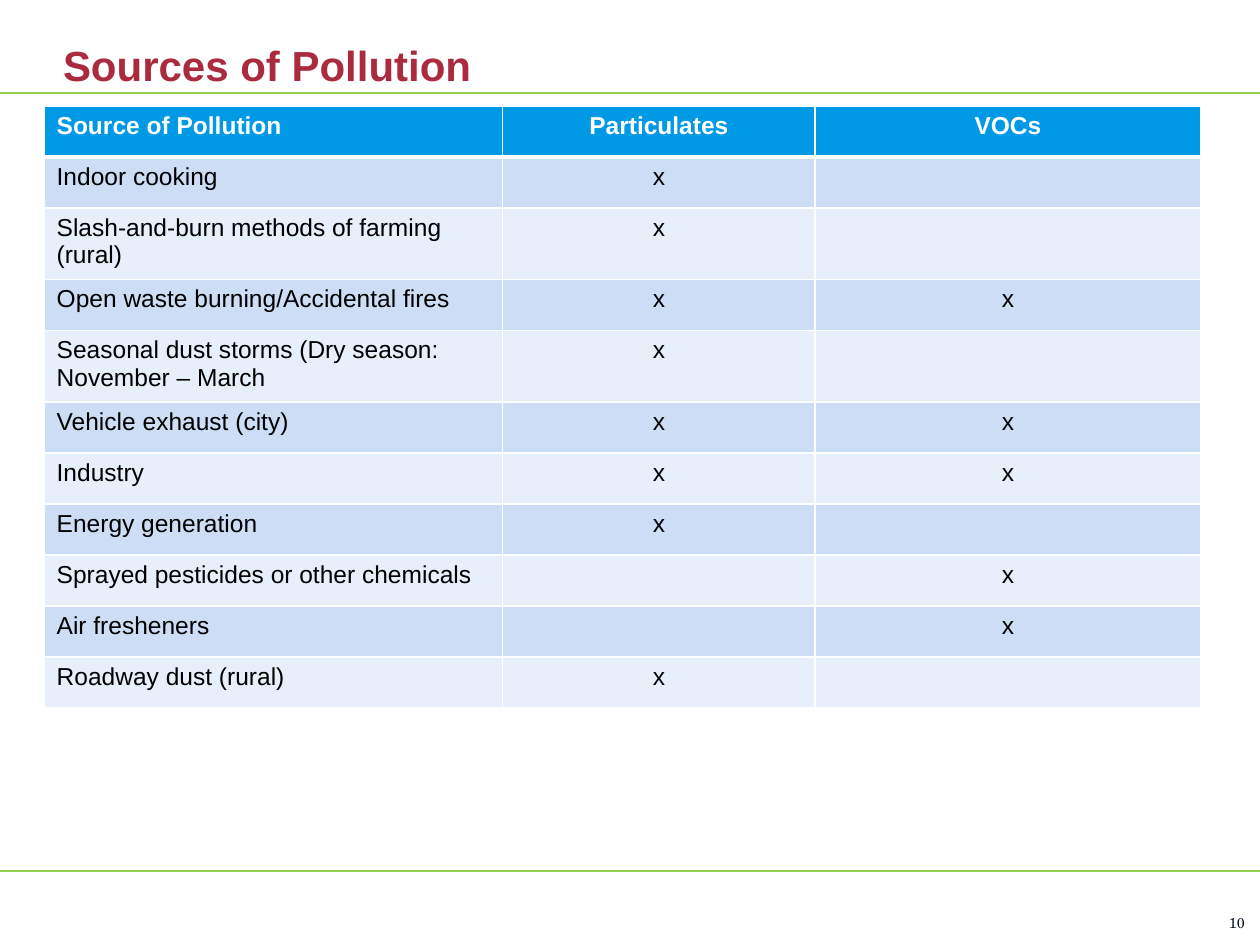
from lxml import etree
from pptx import Presentation
from pptx.dml.color import RGBColor
from pptx.enum.shapes import MSO_CONNECTOR
from pptx.enum.text import MSO_ANCHOR, PP_ALIGN
from pptx.oxml.ns import qn
from pptx.util import Inches, Pt

LINE = MSO_CONNECTOR.STRAIGHT
BOTTOM = MSO_ANCHOR.BOTTOM
LEFT, CENTER, RIGHT = PP_ALIGN.LEFT, PP_ALIGN.CENTER, PP_ALIGN.RIGHT

COLORS = {
    "title": "AA2B3E",
    "rule": "92D050",
    "head": "0099E6",
    "odd": "CCDEF5",
    "even": "E7EFFA",
    "white": "FFFFFF",
    "black": "000000",
    "number": "061323",
}
HEADS = ["Source of Pollution", "Particulates", "VOCs"]
ROWS = [
    ("Indoor cooking", "x", ""),
    ("Slash-and-burn methods of farming (rural)", "x", ""),
    ("Open waste burning/Accidental fires", "x", "x"),
    ("Seasonal dust storms (Dry season: November – March", "x", ""),
    ("Vehicle exhaust (city)", "x", "x"),
    ("Industry", "x", "x"),
    ("Energy generation", "x", ""),
    ("Sprayed pesticides or other chemicals", "", "x"),
    ("Air fresheners", "", "x"),
    ("Roadway dust (rural)", "x", ""),
]
WIDTHS = [3.64, 2.48, 3.06]
ROW_HIGH = 0.405


def color(name):
    return RGBColor.from_string(COLORS[name])


def add_run(para, text, size, tint, bold=False, face="Arial"):
    run = para.add_run()
    run.text = text
    font = run.font
    font.name, font.size, font.bold = face, Pt(size), bold
    font.color.rgb = color(tint)


def add_text(slide, box, text, size, tint, align=LEFT, wrap=True, **style):
    shape = slide.shapes.add_textbox(*map(Inches, box))
    frame = shape.text_frame
    frame.word_wrap = wrap
    frame.vertical_anchor = BOTTOM
    frame.margin_left = frame.margin_right = 0
    frame.margin_top = frame.margin_bottom = 0
    para = frame.paragraphs[0]
    para.alignment = align
    add_run(para, text, size, tint, **style)


def add_rule(slide, top):
    rule = slide.shapes.add_connector(LINE, 0, Inches(top), Inches(10), Inches(top))
    rule.line.color.rgb = color("rule")
    rule.line.width = Pt(1)
    etree.SubElement(rule._element.spPr, qn("a:effectLst"))


def add_edges(cell, top, bottom):
    props = cell._tc.get_or_add_tcPr()
    for side, width in (("L", 1), ("R", 1), ("T", top), ("B", bottom)):
        edge = etree.SubElement(props, qn("a:ln" + side), w=str(Pt(width)))
        fill = etree.SubElement(edge, qn("a:solidFill"))
        etree.SubElement(fill, qn("a:srgbClr"), val=COLORS["white"])


def fill_cell(cell, row, col, text):
    head = row == 0
    add_edges(cell, 3 if row == 1 else 1, 3 if head else 1)
    cell.fill.solid()
    cell.fill.fore_color.rgb = color("head" if head else "odd" if row % 2 else "even")
    para = cell.text_frame.paragraphs[0]
    para.alignment = CENTER if col else LEFT
    if text:
        add_run(para, text, 14, "white" if head else "black", bold=head)
    else:
        para.font.size = Pt(14)


def add_grid(slide):
    data = [HEADS, *ROWS]
    box = (0.35, 0.84, sum(WIDTHS), ROW_HIGH * len(data))
    table = slide.shapes.add_table(len(data), len(HEADS), *map(Inches, box)).table
    for col, width in enumerate(WIDTHS):
        table.columns[col].width = Inches(width)
    for row, texts in enumerate(data):
        table.rows[row].height = Inches(ROW_HIGH)
        for col, text in enumerate(texts):
            fill_cell(table.cell(row, col), row, col, text)


def main():
    deck = Presentation()
    deck.slide_width, deck.slide_height = Inches(10), Inches(7.5)
    slide = deck.slides.add_slide(deck.slide_layouts[6])
    add_text(slide, (9.75, 7.25, 0.13, 0.14), "10", 8.2, "number",
             align=RIGHT, wrap=False, face="TeX Gyre Schola")
    for top in (6.91, 0.74):
        add_rule(slide, top)
    add_text(slide, (0.5, 0.1, 9.32, 0.61), "Sources of Pollution", 24, "title", bold=True)
    add_grid(slide)
    deck.save("out.pptx")


if __name__ == "__main__":
    main()
